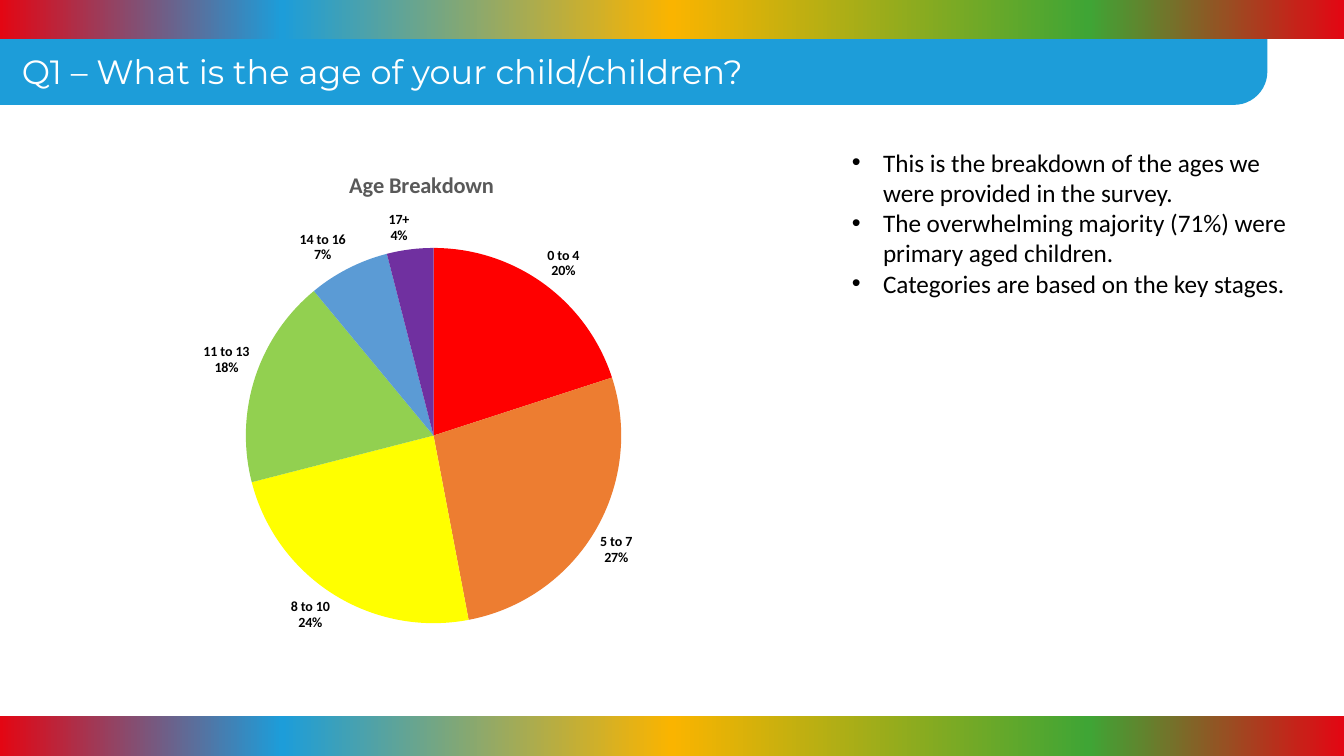
from lxml import etree
from pptx import Presentation
from pptx.chart.data import CategoryChartData
from pptx.dml.color import RGBColor
from pptx.enum.chart import XL_CHART_TYPE, XL_LABEL_POSITION as LABEL_POS
from pptx.enum.shapes import MSO_SHAPE
from pptx.oxml.ns import qn
from pptx.util import Inches, Pt

WHITE = RGBColor(0xFF, 0xFF, 0xFF)
BLACK = RGBColor(0, 0, 0)
GREY = RGBColor(0x59, 0x59, 0x59)
BLUE = RGBColor(0x1D, 0x9D, 0xD9)
RED = RGBColor(0xE3, 0x06, 0x13)
AMBER = RGBColor(0xFA, 0xB4, 0x00)
GREEN = RGBColor(0x3F, 0xA5, 0x35)

RAINBOW = [(0, RED), (21, BLUE), (50, AMBER), (81, GREEN), (100, RED)]
AGES = [
    ("0 to 4", 20, RGBColor(0xFF, 0x00, 0x00)),
    ("5 to 7", 27, RGBColor(0xED, 0x7D, 0x31)),
    ("8 to 10", 24, RGBColor(0xFF, 0xFF, 0x00)),
    ("11 to 13", 18, RGBColor(0x92, 0xD0, 0x50)),
    ("14 to 16", 7, RGBColor(0x5B, 0x9B, 0xD5)),
    ("17+", 4, RGBColor(0x70, 0x30, 0xA0)),
]
FINDINGS = [
    "This is the breakdown of the ages we were provided in the survey.",
    "The overwhelming majority (71%) were primary aged children.",
    "Categories are based on the key stages.",
]
SLIDE_W, SLIDE_H, BAND_H = 13.33, 7.5, 0.4


def style_font(font, name, size, color, bold=False):
    font.name, font.size, font.bold = name, Pt(size), bold
    font.color.rgb = color


def add_panel(slide, preset, left, top, width, height):
    panel = slide.shapes.add_shape(
        preset, Inches(left), Inches(top), Inches(width), Inches(height))
    panel.shadow.inherit = False
    panel.line.fill.background()
    return panel


def add_text_frame(slide, left, top, width, height):
    frame = slide.shapes.add_textbox(
        Inches(left), Inches(top), Inches(width), Inches(height)).text_frame
    frame.word_wrap = True
    return frame


def add_rainbow_band(slide, top):
    band = add_panel(slide, MSO_SHAPE.RECTANGLE, 0, top, SLIDE_W, BAND_H)
    band.fill.gradient()
    band.fill.gradient_angle = 0
    stops = band.element.spPr.find(".//" + qn("a:gsLst"))
    for stop in list(stops):
        stops.remove(stop)
    for percent, color in RAINBOW:
        stop = etree.SubElement(stops, qn("a:gs"), pos=str(percent * 1000))
        etree.SubElement(stop, qn("a:srgbClr"), val=str(color))


def add_heading(slide, left, top, width, height):
    banner = add_panel(slide, MSO_SHAPE.ROUND_1_RECTANGLE, left, top, width, height)
    banner.adjustments[0] = 0.5
    banner.fill.solid()
    banner.fill.fore_color.rgb = BLUE
    # Turned and mirrored, so the round corner sits at the bottom right
    banner.rotation = 180
    banner.element.spPr.find(qn("a:xfrm")).set("flipH", "1")

    frame = add_text_frame(slide, left + 0.12, top + 0.08, width - 0.64, 0.5)
    question = frame.paragraphs[0].add_run()
    question.text = "Q1 – What is the age of your child/children?"
    style_font(question.font, "Montserrat", 24, WHITE)


def place_in_chart(part, index, **fractions):
    """Give a chart part a manual layout, in fractions of the chart."""
    old = part.find(qn("c:layout"))
    if old is not None:
        part.remove(old)
    layout = etree.Element(qn("c:layout"))
    manual = etree.SubElement(layout, qn("c:manualLayout"))
    if "w" in fractions:
        etree.SubElement(manual, qn("c:layoutTarget"), val="inner")
    for axis in "xy":
        etree.SubElement(manual, qn(f"c:{axis}Mode"), val="edge")
    for key, value in fractions.items():
        etree.SubElement(manual, qn(f"c:{key}"), val=str(value))
    part.insert(index, layout)


def add_age_chart(slide, left, top, width, height):
    data = CategoryChartData()
    data.categories = [age for age, _, _ in AGES]
    data.add_series("Series 1", [share for _, share, _ in AGES])
    chart = slide.shapes.add_chart(
        XL_CHART_TYPE.PIE, Inches(left), Inches(top),
        Inches(width), Inches(height), data).chart
    chart.has_legend = False
    style_font(chart.font, "Calibri", 10, BLACK)

    chart.has_title = True
    title = chart.chart_title.text_frame.paragraphs[0].add_run()
    title.text = "Age Breakdown"
    style_font(title.font, "Calibri", 16, GREY, bold=True)
    place_in_chart(chart.chart_title.element.find(qn("c:tx")).getparent(), 1,
                   x=0.41, y=0.04)

    pie = chart.plots[0]
    pie.vary_by_categories = True
    place_in_chart(chart.element.find(".//" + qn("c:plotArea")), 0,
                   x=0.29, y=0.2, w=0.45, h=0.73)
    for index, (_, _, color) in enumerate(AGES):
        wedge = pie.series[0].points[index].format
        wedge.fill.solid()
        wedge.fill.fore_color.rgb = color
        wedge.line.fill.background()

    labels = pie.series[0].data_labels
    labels.show_category_name = True
    labels.show_percentage = True
    labels.show_value = False
    labels.position = LABEL_POS.OUTSIDE_END
    style_font(labels.font, "Calibri", 10, BLACK, bold=True)
    separator = etree.Element(qn("c:separator"))
    separator.text = "\n"
    dlbls = pie.series[0].data_labels._element
    last_flag = dlbls.find(qn("c:showBubbleSize"))
    if last_flag is None:
        last_flag = dlbls.find(qn("c:showPercent"))
    last_flag.addnext(separator)


def add_findings(slide, left, top, width, height):
    frame = add_text_frame(slide, left, top, width, height)
    for index, finding in enumerate(FINDINGS):
        paragraph = frame.add_paragraph() if index else frame.paragraphs[0]
        run = paragraph.add_run()
        run.text = finding
        style_font(run.font, "Calibri", 18, BLACK)
        properties = paragraph._p.get_or_add_pPr()
        properties.set("marL", str(Inches(0.31)))
        properties.set("indent", str(-Inches(0.31)))
        etree.SubElement(properties, qn("a:buFont"), typeface="Arial")
        etree.SubElement(properties, qn("a:buChar"), char="•")


def main():
    prs = Presentation()
    prs.slide_width, prs.slide_height = Inches(SLIDE_W), Inches(SLIDE_H)
    slide = prs.slides.add_slide(prs.slide_layouts[6])
    add_heading(slide, 0, 0.38, 12.57, 0.66)
    for top in (-0.01, SLIDE_H - BAND_H):
        add_rainbow_band(slide, top)
    add_age_chart(slide, 0, 1.44, 8.35, 5.1)
    add_findings(slide, 8.35, 1.41, 4.54, 1.62)
    prs.save("out.pptx")


if __name__ == "__main__":
    main()
